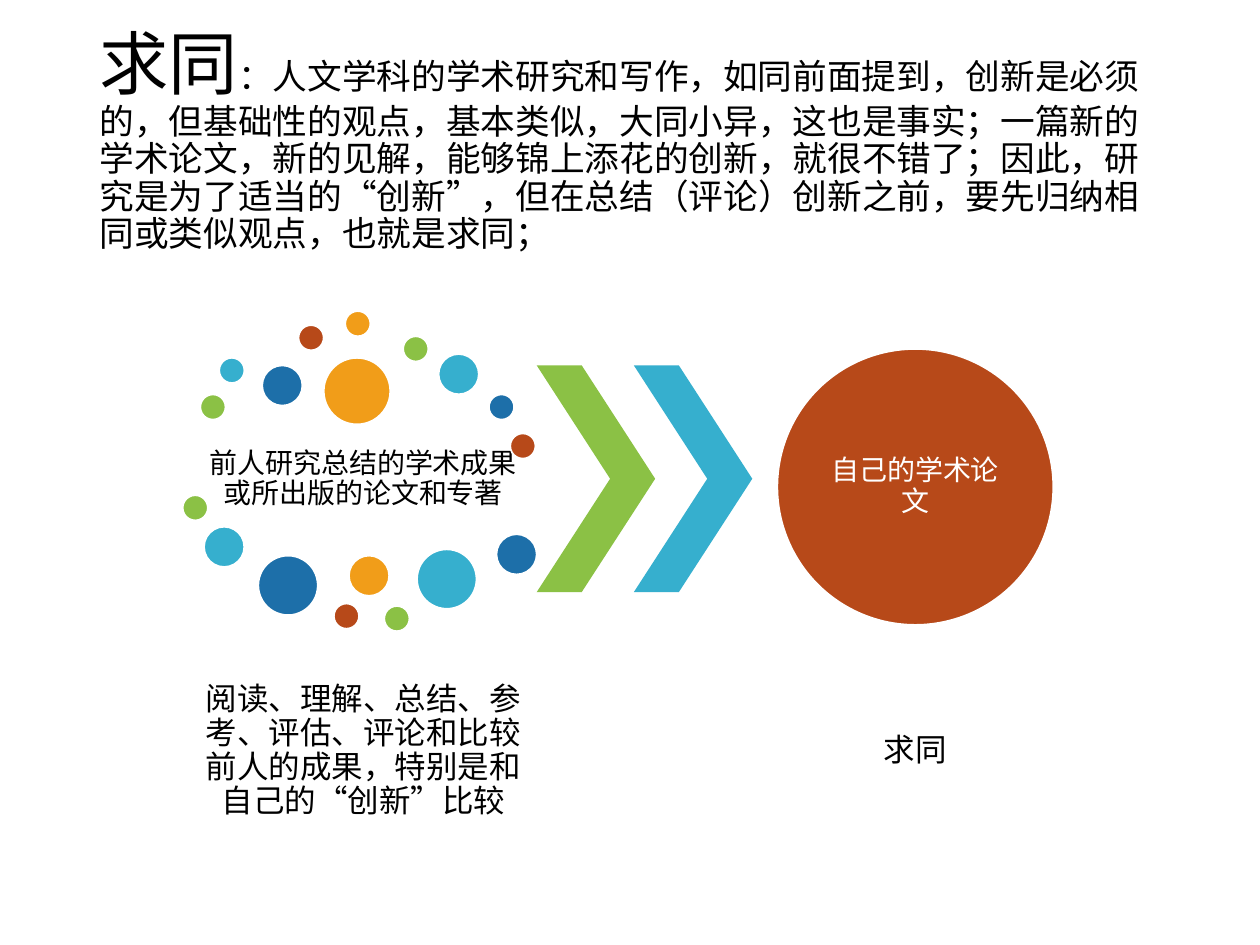
from itertools import cycle
from pptx import Presentation
from pptx.dml.color import RGBColor
from pptx.enum import shapes, text
from pptx.util import Pt

HEAD = "求同"
LEAD = ("：人文学科的学术研究和写作，如同前面提到，创新是必须的，但基础性的观点，"
        "基本类似，大同小异，这也是事实；一篇新的学术论文，新的见解，能够锦上添花的创新，"
        "就很不错了；因此，研究是为了适当的“创新”，但在总结（评论）创新之前，"
        "要先归纳相同或类似观点，也就是求同；")
GOAL = "自己的学术论文"

# text, box (left, top, width, height), inset, size key
LABELS = [
    ("前人研究总结的学术成果或所出版的论文和专著", (115.2, 243.4, 185, 61.2), 1.6, "small"),
    ("阅读、理解、总结、参考、评估、评论和比较前人的成果，特别是和自己的“创新”比较",
     (115.2, 372.2, 185, 114.5), 1.8, "note"),
    ("求同", (430.6, 372.2, 185, 114.5), 1.8, "note"),
]

# left, top, size key
DOTS = [
    (114.5, 225.4, "S"), (125.3, 204.5, "M"[:0] + "S"), (149.8, 208.8, "M"),
    (170.6, 185.8, "S"), (197.3, 177.8, "S"), (230.4, 192.2, "S"),
    (250.6, 202.3, "M"), (279.4, 225.4, "S"), (291.6, 247.7, "S"),
    (185, 204.5, "XL"), (104.4, 283, "S"), (116.6, 301, "M"),
    (147.6, 317.5, "L"), (190.8, 344.9, "S"), (199.4, 317.5, "M"),
    (219.6, 346.3, "S"), (238.3, 313.9, "L"), (283.7, 305.3, "M"),
]
SIDE = {"S": 14.4, "M": 23, "L": 34, "XL": 38}
ARROWS = [("green", 306.7), ("cyan", 362.2)]

THEME = {
    "font": "Times New Roman",
    "size": {"head": 39.6, "lead": 19.8, "small": 16, "note": 18},
    "color": {"green": "8BC145", "cyan": "36AFCE", "blue": "1D6FA9",
              "red": "B74919", "orange": "F19D19",
              "black": "000000", "white": "FFFFFF"},
}
CYCLE = ("green", "cyan", "blue", "red", "orange")
KIND = shapes.MSO_SHAPE


def color(name):
    return RGBColor.from_string(THEME["color"][name])


def write(shape, words, size, ink, inset):
    """Fill a shape with one centred paragraph."""
    frame = shape.text_frame
    frame.word_wrap = True
    frame.vertical_anchor = text.MSO_ANCHOR.MIDDLE
    frame.margin_left = frame.margin_right = Pt(inset)
    frame.margin_top = frame.margin_bottom = Pt(inset)
    para = frame.paragraphs[0]
    para.text = words
    para.alignment = text.PP_ALIGN.CENTER
    para.line_spacing = 0.9
    para.font.name = THEME["font"]
    para.font.size = Pt(THEME["size"][size])
    para.font.color.rgb = color(ink)


def draw(slide, kind, box, fill, edge=True):
    shape = slide.shapes.add_shape(kind, *map(Pt, box))
    shape.shadow.inherit = False
    shape.fill.solid()
    shape.fill.fore_color.rgb = color(fill)
    if edge:
        shape.line.color.rgb = color("white")
        shape.line.width = Pt(1)
    else:
        shape.line.fill.background()
    return shape


def title(slide):
    shape = slide.shapes.title
    shape.left, shape.top, shape.width, shape.height = map(Pt, (49.7, 28.8, 620.6, 104.4))
    frame = shape.text_frame
    frame.word_wrap = True
    frame.auto_size = text.MSO_AUTO_SIZE.NONE
    frame.vertical_anchor = text.MSO_ANCHOR.MIDDLE
    para = frame.paragraphs[0]
    para.alignment = text.PP_ALIGN.LEFT
    para.line_spacing = 0.9
    para.font.name = THEME["font"]
    para.font.color.rgb = color("black")
    for words, size in ((HEAD, "head"), (LEAD, "lead")):
        run = para.add_run()
        run.text = words
        run.font.size = Pt(THEME["size"][size])


def main():
    deck = Presentation()
    deck.slide_width, deck.slide_height = Pt(720), Pt(540)
    slide = deck.slides.add_slide(deck.slide_layouts[5])
    title(slide)
    for words, box, inset, size in LABELS:
        write(slide.shapes.add_textbox(*map(Pt, box)), words, size, "black", inset)
    for (left, top, key), fill in zip(DOTS, cycle(CYCLE)):
        draw(slide, KIND.OVAL, (left, top, SIDE[key], SIDE[key]), fill)
    for fill, left in ARROWS:
        arrow = draw(slide, KIND.CHEVRON, (left, 208.8, 67.7, 129.6), fill, edge=False)
        arrow.adjustments[0] = 0.62
    goal = draw(slide, KIND.OVAL, (444.2, 199.4, 157.7, 157.7), "red")
    write(goal, GOAL, "small", "white", 0)
    deck.save("out.pptx")


if __name__ == "__main__":
    main()
